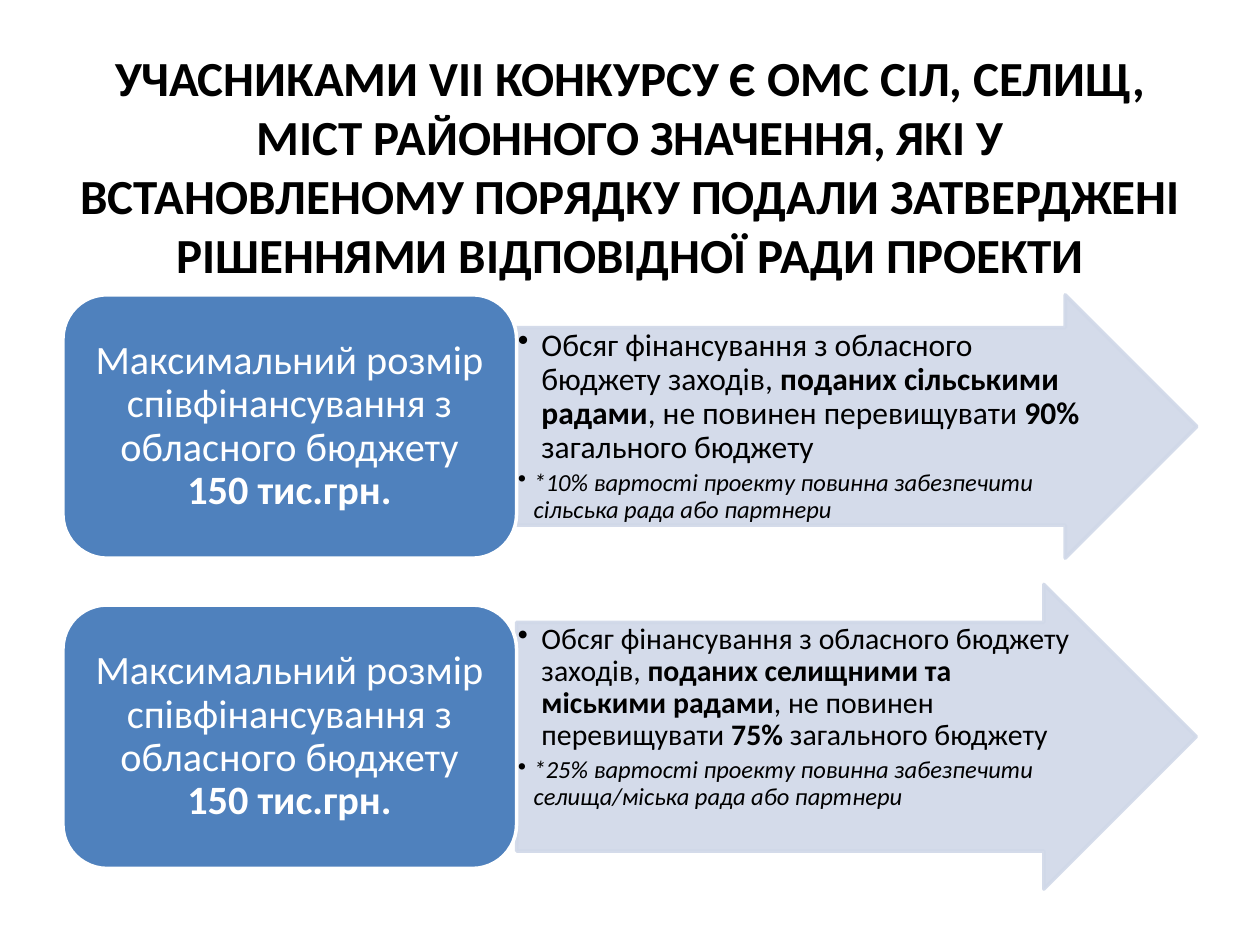
from lxml.etree import SubElement
from pptx import Presentation
from pptx.dml.color import RGBColor
from pptx.enum.shapes import MSO_SHAPE
from pptx.enum.text import MSO_ANCHOR, PP_ALIGN
from pptx.oxml.ns import qn
from pptx.util import Pt

FONT = "Calibri"
BLUE, PALE, WHITE, BLACK = "4F81BD", "D0D8E8", "FFFFFF", "000000"
LEFT, MID = 36, 295.2
TITLE = (
    "УЧАСНИКАМИ VІІ КОНКУРСУ Є ОМС СІЛ, СЕЛИЩ, МІСТ РАЙОННОГО ЗНАЧЕННЯ, "
    "ЯКІ У ВСТАНОВЛЕНОМУ ПОРЯДКУ ПОДАЛИ ЗАТВЕРДЖЕНІ РІШЕННЯМИ ВІДПОВІДНОЇ РАДИ ПРОЕКТИ"
)
LIMIT = [("Максимальний розмір співфінансування з обласного бюджету ", False),
         ("150 тис.грн.", True)]
ROWS = [
    dict(mid=243.7, tall=150.5, wide=388.8, size=18,
         rule=[("Обсяг фінансування з обласного бюджету заходів, ", False),
               ("поданих сільськими радами", True),
               (", не повинен перевищувати ", False),
               ("90% ", True), ("загального бюджету", False)],
         note="*10% вартості проекту повинна забезпечити сільська рада або партнери"),
    dict(mid=421, tall=174.2, wide=388.4, size=17,
         rule=[("Обсяг фінансування з обласного бюджету заходів, ", False),
               ("поданих селищними та міськими радами", True),
               (", не повинен перевищувати ", False),
               ("75%", True), (" загального бюджету", False)],
         note="*25% вартості проекту повинна забезпечити селища/міська рада або партнери"),
]


def rgb(code):
    """Turn a hex string into a colour."""
    return RGBColor.from_string(code)


def fade(fill, share):
    """Set the opacity of a solid fill in percent."""
    color = fill._xPr.find(qn("a:solidFill"))[0]
    SubElement(color, qn("a:alpha")).set("val", str(share * 1000))


def bullet(para, indent):
    """Give a paragraph a hanging bullet."""
    props = para._p.get_or_add_pPr()
    props.set("marL", str(Pt(indent)))
    props.set("indent", str(-Pt(indent)))
    SubElement(props, qn("a:buChar")).set("char", "•")


def write(para, text, size=18, color=BLACK, bold=False, italic=False,
          align=PP_ALIGN.LEFT, lines=None, after=0):
    """Add a formatted run to a paragraph."""
    para.alignment = align
    para.space_after = Pt(after)
    if lines:
        para.line_spacing = lines
    run = para.add_run()
    run.text = text
    font = run.font
    font.name, font.size, font.bold, font.italic = FONT, Pt(size), bold, italic
    font.color.rgb = rgb(color)


def setup(frame, anchor, side, edge):
    """Set wrapping, anchor and insets of a text frame."""
    frame.word_wrap = True
    frame.vertical_anchor = anchor
    frame.margin_left = frame.margin_right = Pt(side)
    frame.margin_top = frame.margin_bottom = Pt(edge)
    return frame


def shape(slide, kind, box, fill, line, share=100):
    """Add a filled and outlined preset shape."""
    item = slide.shapes.add_shape(kind, *map(Pt, box))
    item.shadow.inherit = False
    item.fill.solid()
    item.fill.fore_color.rgb = rgb(fill)
    item.line.color.rgb = rgb(line)
    item.line.width = Pt(2)
    if share < 100:
        fade(item.fill, share)
        fade(item.line.fill, share)
    return item


def title(slide):
    """Add the heading."""
    box = slide.shapes.add_textbox(Pt(LEFT), Pt(21.6), Pt(648), Pt(146))
    frame = setup(box.text_frame, MSO_ANCHOR.MIDDLE, 7.2, 3.6)
    write(frame.paragraphs[0], TITLE, size=28, bold=True, align=PP_ALIGN.CENTER)


def arrow(slide, mid, tall, wide, size, rule, note):
    """Add an arrow holding a rule and its note."""
    item = shape(slide, MSO_SHAPE.RIGHT_ARROW, (MID, mid - tall / 2, wide, tall),
                 PALE, PALE, share=90)
    item.adjustments[0], item.adjustments[1] = 0.75, 0.5
    frame = setup(item.text_frame, MSO_ANCHOR.TOP, 0.75, 0.75)
    first, last = frame.paragraphs[0], frame.add_paragraph()
    for text, bold in rule:
        write(first, text, size=size, bold=bold, lines=0.9, after=3)
    write(last, note, size=14, italic=True, lines=0.9, after=2.5)
    bullet(first, 13.5)
    bullet(last, 9)


def card(slide, mid):
    """Add a rounded card with the funding limit."""
    tall = 150.5
    item = shape(slide, MSO_SHAPE.ROUNDED_RECTANGLE,
                 (LEFT, mid - tall / 2, MID - LEFT, tall), BLUE, WHITE)
    frame = setup(item.text_frame, MSO_ANCHOR.MIDDLE, 7.2, 3.6)
    for text, bold in LIMIT:
        write(frame.paragraphs[0], text, size=23, color=WHITE, bold=bold,
              align=PP_ALIGN.CENTER, lines=0.9)


def main():
    """Build and save the slide."""
    deck = Presentation()
    deck.slide_width, deck.slide_height = Pt(720), Pt(540)
    slide = deck.slides.add_slide(deck.slide_layouts[6])
    title(slide)
    for row in ROWS:
        arrow(slide, **row)
        card(slide, row["mid"])
    deck.save("out.pptx")


if __name__ == "__main__":
    main()
